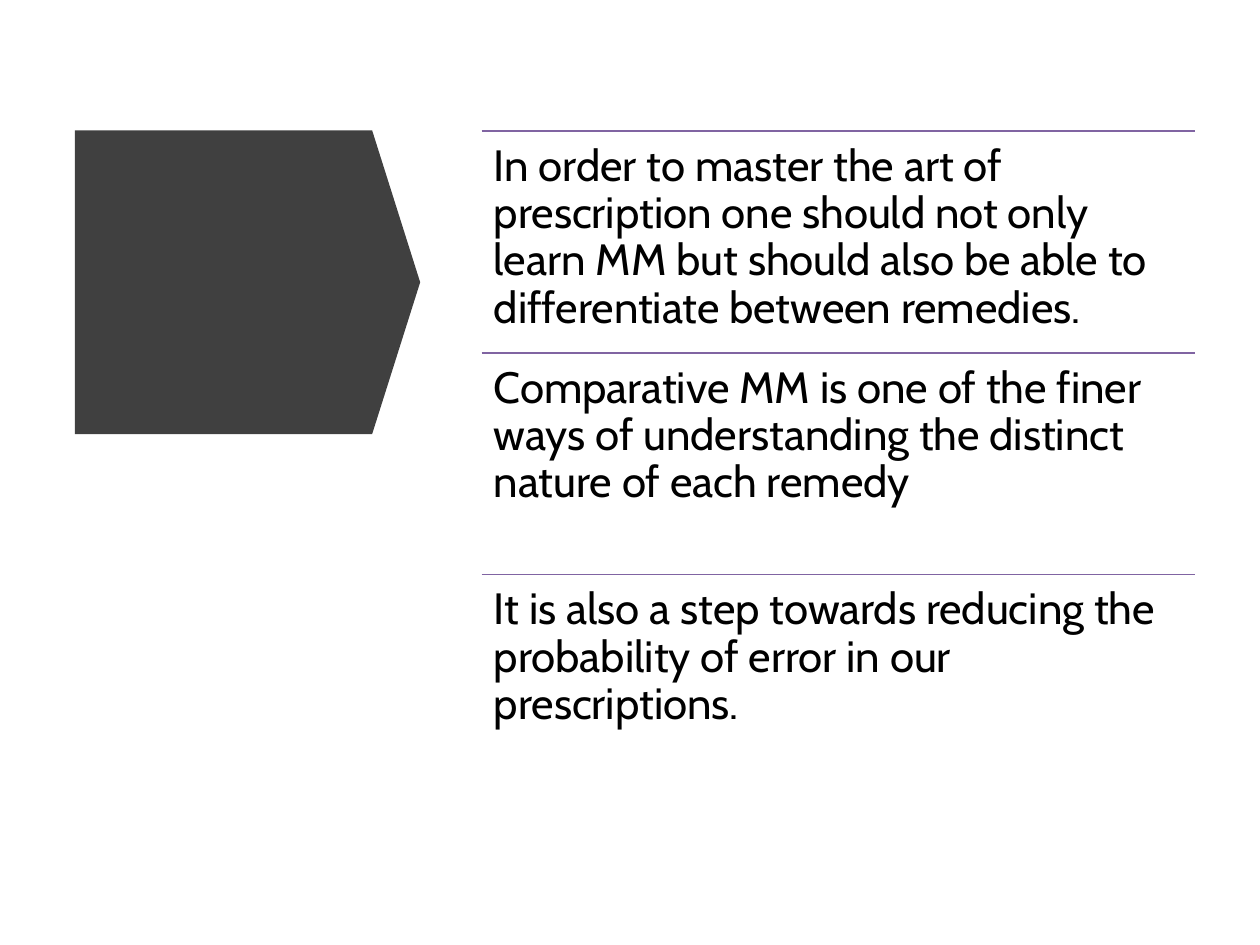
import dataclasses

import pptx
import pptx.dml.color
import pptx.enum.shapes
import pptx.enum.text
import pptx.oxml.ns
import pptx.util
from lxml import etree

Pt = pptx.util.Pt
RGB = pptx.dml.color.RGBColor


@dataclasses.dataclass(frozen=True)
class Theme:
    arrow: RGB = RGB(0x40, 0x40, 0x40)
    rule: RGB = RGB(0x80, 0x64, 0xA2)
    text: RGB = RGB(0, 0, 0)
    font: str = "Cabin"
    body_size: float = 25
    rule_width: float = 1


@dataclasses.dataclass(frozen=True)
class Box:
    left: float
    top: float
    width: float
    height: float


THEME = Theme()
ARROW_BOX = Box(42.84, 74.52, 197.28, 173.52)
LIST_BOX = Box(275.2, 74.9, 407.9, 380.1)
STATEMENTS = [
    "In order to master the art of prescription one should not only learn MM "
    "but should also be able to differentiate between remedies.",
    "Comparative MM is one of the finer ways of understanding the distinct "
    "nature of each remedy",
    "It is also a step towards reducing the probability of error in our "
    "prescriptions.",
]


def add_text(page, box, text, *, size, color, font, spacing=0.9, inset=7.2):
    frame = page.shapes.add_textbox(
        Pt(box.left), Pt(box.top), Pt(box.width), Pt(box.height)
    ).text_frame
    frame.word_wrap = True
    frame.vertical_anchor = pptx.enum.text.MSO_ANCHOR.TOP
    frame.margin_left = frame.margin_right = Pt(inset)
    frame.margin_top = frame.margin_bottom = Pt(inset)
    para = frame.paragraphs[0]
    para.line_spacing = spacing
    span = para.add_run()
    span.text = text
    span.font.size = Pt(size)
    span.font.name = font
    span.font.color.rgb = color


def add_rule(page, left, top, width):
    rule = page.shapes.add_connector(
        pptx.enum.shapes.MSO_CONNECTOR.STRAIGHT,
        Pt(left), Pt(top), Pt(left + width), Pt(top),
    )
    rule.line.color.rgb = THEME.rule
    rule.line.width = Pt(THEME.rule_width)
    etree.SubElement(rule._element.spPr, pptx.oxml.ns.qn("a:effectLst"))


def add_title_arrow(page, box):
    shift = (box.width - box.height) / 2
    arrow = page.shapes.add_shape(
        pptx.enum.shapes.MSO_SHAPE.DOWN_ARROW,
        Pt(box.left + shift), Pt(box.top - shift), Pt(box.height), Pt(box.width),
    )
    arrow.rotation = 270
    arrow.adjustments[0] = 1
    arrow.adjustments[1] = 0.158
    arrow.shadow.inherit = False
    arrow.fill.solid()
    arrow.fill.fore_color.rgb = THEME.arrow
    arrow.line.fill.background()


def add_statement_list(page, box, statements):
    row_height = box.height / len(statements)
    for index, statement in enumerate(statements):
        row = Box(box.left, box.top + index * row_height, box.width, row_height)
        add_rule(page, row.left, row.top, row.width)
        add_text(page, row, statement, size=THEME.body_size,
                 color=THEME.text, font=THEME.font)


def main():
    deck = pptx.Presentation()
    deck.slide_width, deck.slide_height = Pt(720), Pt(540)
    page = deck.slides.add_slide(deck.slide_layouts[6])
    add_title_arrow(page, ARROW_BOX)
    add_statement_list(page, LIST_BOX, STATEMENTS)
    deck.save("out.pptx")


if __name__ == "__main__":
    main()
